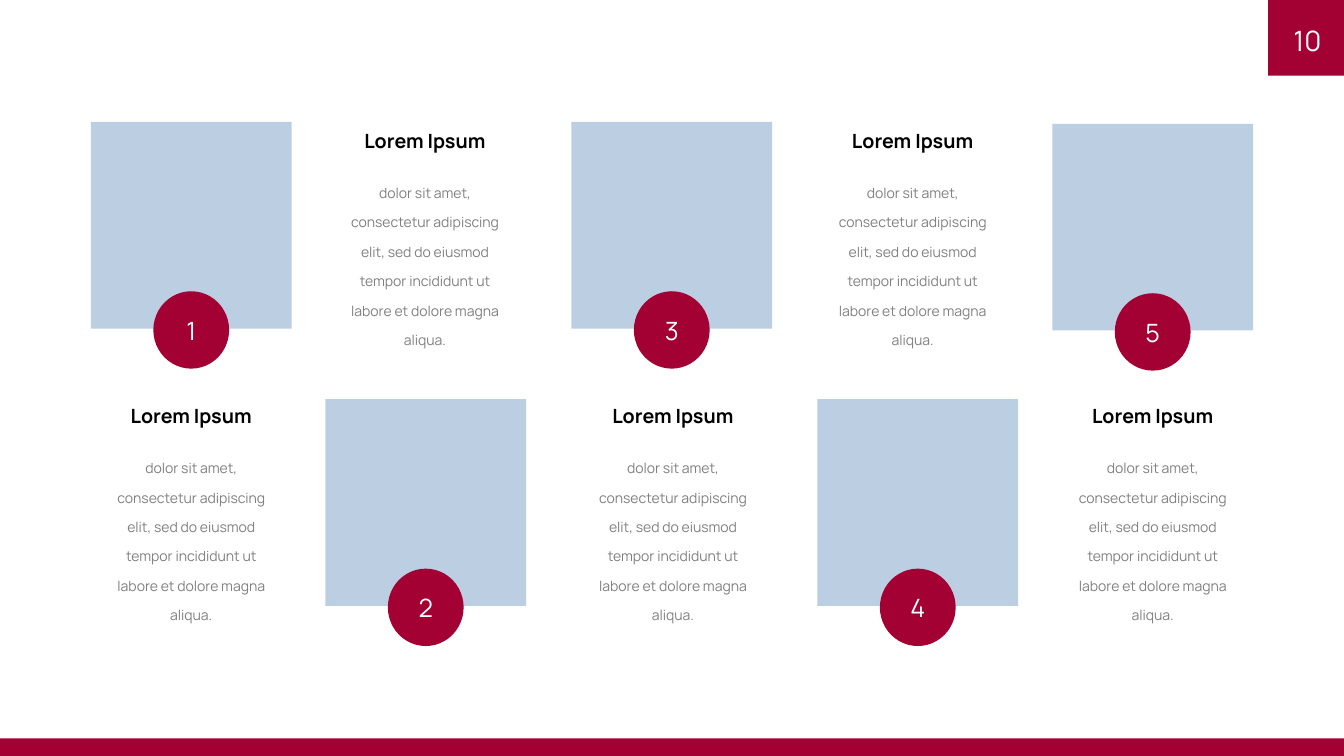
from pptx import Presentation
from pptx.dml.color import RGBColor
from pptx.enum.shapes import MSO_SHAPE
from pptx.enum.text import MSO_ANCHOR, PP_ALIGN
from pptx.util import Cm, Pt

RECTANGLE, OVAL = MSO_SHAPE.RECTANGLE, MSO_SHAPE.OVAL
TOP, MIDDLE = MSO_ANCHOR.TOP, MSO_ANCHOR.MIDDLE
CENTER, RIGHT = PP_ALIGN.CENTER, PP_ALIGN.RIGHT

HEADING = "Lorem Ipsum"
BODY = ("dolor sit amet, consectetur adipiscing elit, sed do eiusmod "
        "tempor incididunt ut labore et dolore magna aliqua.")
PAGE_NUMBER = "10"
CARDS = [
    {"number": "1", "tile": (2.29, 3.07), "text": (2.29, 10.06)},
    {"number": "2", "tile": (8.2, 10.06), "text": (8.18, 3.12)},
    {"number": "3", "tile": (14.4, 3.07), "text": (14.43, 10.06)},
    {"number": "4", "tile": (20.6, 10.06), "text": (20.47, 3.12)},
    {"number": "5", "tile": (26.52, 3.12), "text": (26.52, 10.06)},
]

FONT = "Manrope"
CRIMSON, BLUE, WHITE, BLACK, GREY = "A30134", "BBCEE2", "FFFFFF", "000000", "808080"
SLIDE_WIDTH, SLIDE_HEIGHT = 33.87, 19.05
CORNER, FOOTER = 1.91, 0.44
TILE_WIDTH, TILE_HEIGHT = 5.06, 5.21
BADGE_WIDTH, BADGE_HEIGHT, BADGE_DROP = 1.91, 1.95, 4.27
BODY_WIDTH, BODY_DROP = 4.55, 1.08


def color(value):
    return RGBColor.from_string(value)


def add_block(page, kind, left, top, width, height, fill):
    shape = page.shapes.add_shape(kind, Cm(left), Cm(top), Cm(width), Cm(height))
    shape.shadow.inherit = False
    shape.fill.solid()
    shape.fill.fore_color.rgb = color(fill)
    shape.line.fill.background()
    return shape


def write(box, text, size, ink, bold=False, align=CENTER, anchor=TOP, spacing=None):
    frame = box.text_frame
    frame.word_wrap = True
    frame.vertical_anchor = anchor
    para = frame.paragraphs[0]
    para.text = text
    para.alignment = align
    para.line_spacing = spacing
    para.font.name = FONT
    para.font.size = Pt(size)
    para.font.bold = bold
    para.font.color.rgb = color(ink)


def add_text(page, left, top, width, height, text, size, ink, **style):
    box = page.shapes.add_textbox(Cm(left), Cm(top), Cm(width), Cm(height))
    write(box, text, size, ink, **style)
    return box


def add_card(page, card):
    left, top = card["tile"]
    add_block(page, RECTANGLE, left, top, TILE_WIDTH, TILE_HEIGHT, BLUE)
    badge = add_block(page, OVAL, left + (TILE_WIDTH - BADGE_WIDTH) / 2,
                      top + BADGE_DROP, BADGE_WIDTH, BADGE_HEIGHT, CRIMSON)
    write(badge, card["number"], 18, WHITE, anchor=MIDDLE)
    left, top = card["text"]
    add_text(page, left, top, TILE_WIDTH, 1.65, HEADING, 14, BLACK, bold=True)
    add_text(page, left + (TILE_WIDTH - BODY_WIDTH) / 2, top + BODY_DROP,
             BODY_WIDTH, 4.67, BODY, 10, GREY, spacing=1.75)


def main():
    deck = Presentation()
    deck.slide_width, deck.slide_height = Cm(SLIDE_WIDTH), Cm(SLIDE_HEIGHT)
    page = deck.slides.add_slide(deck.slide_layouts[6])
    add_block(page, RECTANGLE, SLIDE_WIDTH - CORNER, 0, CORNER, CORNER, CRIMSON)
    add_block(page, RECTANGLE, 0, SLIDE_HEIGHT - FOOTER, SLIDE_WIDTH, FOOTER, CRIMSON)
    number = add_text(page, 31.9, 0.15, 1.4, 1.75, PAGE_NUMBER, 20, WHITE,
                      align=RIGHT, anchor=MIDDLE)
    frame = number.text_frame
    frame.margin_left = frame.margin_right = frame.margin_top = frame.margin_bottom = 0
    for card in CARDS:
        add_card(page, card)
    deck.save("out.pptx")


if __name__ == "__main__":
    main()
